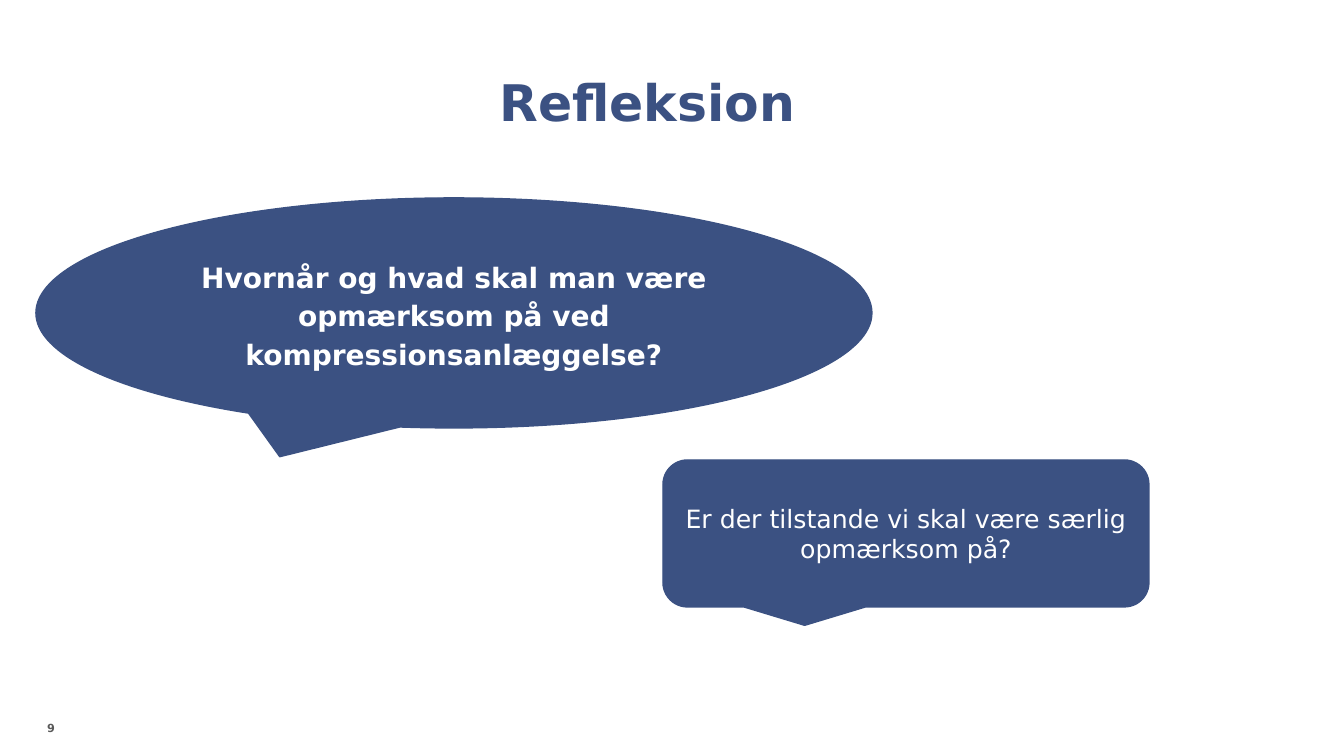
import pptx
import pptx.util
import pptx.dml.color
import pptx.enum.shapes
import pptx.enum.text
from dataclasses import dataclass

SHAPE = pptx.enum.shapes.MSO_SHAPE
ALIGN = pptx.enum.text.PP_ALIGN
ANCHOR = pptx.enum.text.MSO_ANCHOR
EMU_PER_PX = 914400 / 100.8


@dataclass(frozen=True)
class Theme:
    font: str = "DejaVu Sans"
    navy: str = "3B5182"
    white: str = "FFFFFF"
    grey: str = "595959"
    title: int = 36
    question: int = 20
    follow_up: int = 18
    number: int = 8


THEME = Theme()


def px(length):
    return round(length * EMU_PER_PX)


def rgb(value):
    return pptx.dml.color.RGBColor.from_string(value)


def apply(target, values):
    for key, value in values.items():
        setattr(target, key, value)


def write(frame, text, size, color, bold, frame_format, paragraph_format):
    apply(frame, {"word_wrap": True, **frame_format})
    paragraph = frame.paragraphs[0]
    apply(paragraph, paragraph_format)
    run = paragraph.add_run()
    run.text = text
    apply(run.font, {"name": THEME.font, "size": pptx.util.Pt(size), "bold": bold})
    run.font.color.rgb = rgb(color)


def add_label(slide, box, text, size, color, anchor, paragraph_format):
    label = slide.shapes.add_textbox(*map(px, box))
    margins = {f"margin_{side}": 0 for side in ("left", "top", "right", "bottom")}
    write(label.text_frame, text, size, color, True,
          {"vertical_anchor": anchor, **margins}, paragraph_format)


def add_callout(slide, box, outline, text, size, bold, spacing):
    callout = slide.shapes.add_shape(outline, *map(px, box))
    callout.shadow.inherit = False
    callout.fill.solid()
    callout.fill.fore_color.rgb = rgb(THEME.navy)
    callout.line.color.rgb = rgb(THEME.navy)
    callout.line.width = pptx.util.Pt(1)
    write(callout.text_frame, text, size, THEME.white, bold,
          {"vertical_anchor": ANCHOR.MIDDLE}, {"alignment": ALIGN.CENTER, **spacing})


def reflection_slide(presentation, box):
    left, top, width, height = box
    slide = presentation.slides.add_slide(presentation.slide_layouts[6])
    add_label(slide, (left + 16, top + height - 35, 39, 35), "9",
              THEME.number, THEME.grey, ANCHOR.TOP,
              {"alignment": ALIGN.RIGHT, "space_after": pptx.util.Pt(6)})
    add_label(slide, (left + 116, top + 13, 1063, 119), "Refleksion",
              THEME.title, THEME.navy, ANCHOR.BOTTOM,
              {"alignment": ALIGN.CENTER, "line_spacing": 0.9})
    add_callout(slide, (left + 663, top + 460, 486, 147),
                SHAPE.ROUNDED_RECTANGULAR_CALLOUT,
                "Er der tilstande vi skal være særlig opmærksom på?",
                THEME.follow_up, False, {})
    add_callout(slide, (left + 36, top + 198, 836, 230),
                SHAPE.OVAL_CALLOUT,
                "Hvornår og hvad skal man være opmærksom på ved kompressionsanlæggelse?",
                THEME.question, True,
                {"line_spacing": 1.15, "space_after": pptx.util.Pt(8)})


def main():
    presentation = pptx.Presentation()
    width, height = 1344, 756
    apply(presentation, {"slide_width": px(width), "slide_height": px(height)})
    reflection_slide(presentation, (0, 0, width, height))
    presentation.save("out.pptx")


if __name__ == "__main__":
    main()
